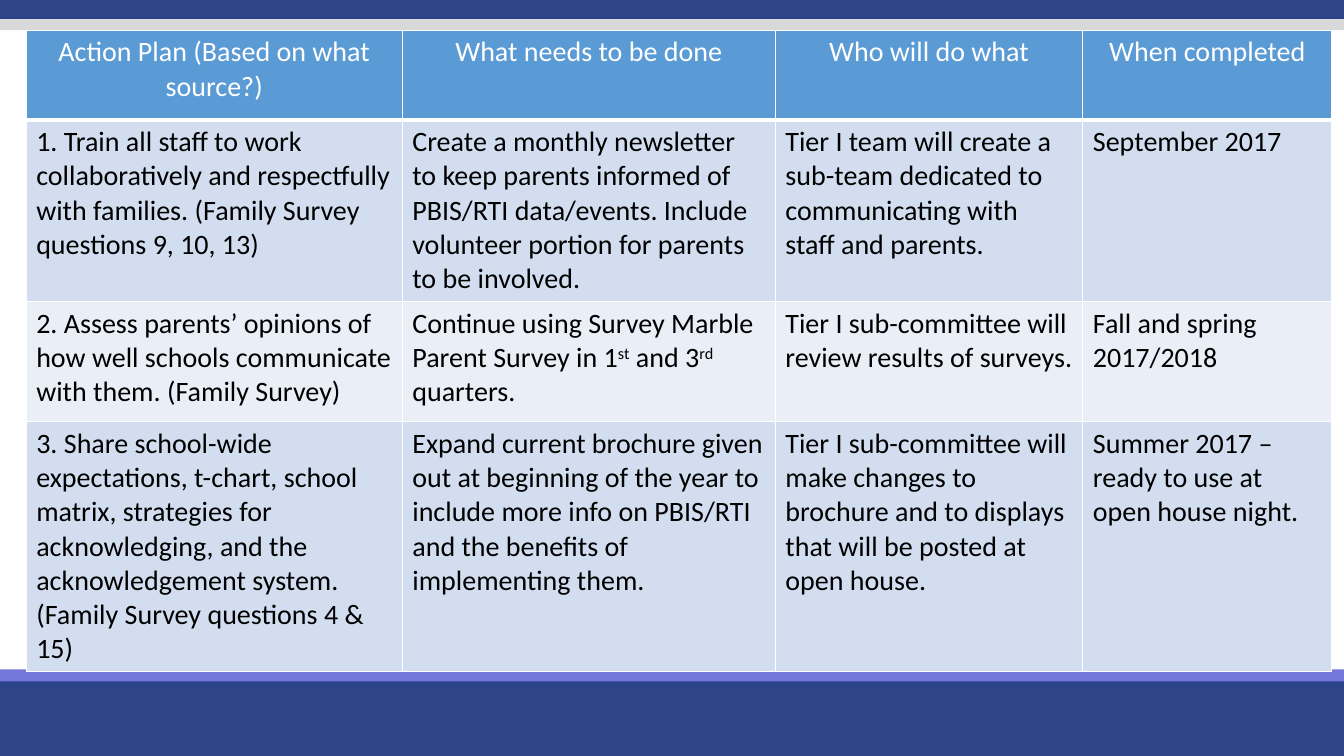
from lxml.etree import SubElement
from pptx import Presentation
from pptx.dml.color import RGBColor
from pptx.enum.shapes import MSO_SHAPE as SHAPE
from pptx.enum.text import PP_ALIGN as ALIGN
from pptx.oxml.ns import qn
from pptx.util import Inches, Pt

BANDS = [
    (6.7, 0.8, "2E4488"),
    (6.64, 0.12, "7476DA"),
    (-0.03, 0.22, "2E4488"),
    (0.19, 0.11, "D9D9D9"),
]
COL_WIDTHS = [3.73, 3.7, 3.05, 2.47]
ROW_HEIGHTS = [0.89, 1.79, 1.19, 2.46]
ROW_FILLS = ["5B9BD5", "D2DEEF", "EAEFF7", "D2DEEF"]
SUPERSCRIPT_MARK = "^"
PLAN = [
    [
        "Action Plan (Based on what source?)",
        "What needs to be done",
        "Who will do what",
        "When completed",
    ],
    [
        "1. Train all staff to work collaboratively and respectfully with families. "
        "(Family Survey questions 9, 10, 13)",
        "Create a monthly newsletter to keep parents informed of PBIS/RTI data/events. "
        "Include volunteer portion for parents to be involved.",
        "Tier I team will create a sub-team dedicated to communicating with staff and parents.",
        "September 2017",
    ],
    [
        "2. Assess parents’ opinions of how well schools communicate with them. (Family Survey)",
        "Continue using Survey Marble Parent Survey in 1^st^ and 3^rd^ quarters.",
        "Tier I sub-committee will review results of surveys.",
        "Fall and spring 2017/2018",
    ],
    [
        "3. Share school-wide expectations, t-chart, school matrix, strategies for "
        "acknowledging, and the acknowledgement system. (Family Survey questions 4 & 15)",
        "Expand current brochure given out at beginning of the year to include more info "
        "on PBIS/RTI and the benefits of implementing them.",
        "Tier I sub-committee will make changes to brochure and to displays that will be "
        "posted at open house.",
        "Summer 2017 – ready to use at open house night.",
    ],
]


def rgb(color):
    return RGBColor.from_string(color)


def add_band(s, top, height, color):
    sp = s.shapes.add_shape(SHAPE.RECTANGLE, 0, Inches(top), Inches(13.33), Inches(height))
    sp.shadow.inherit = False
    sp.fill.solid()
    sp.fill.fore_color.rgb = rgb(color)
    sp.line.fill.background()


def set_borders(cell, color, **widths):
    tcPr = cell._tc.get_or_add_tcPr()
    for side in "LRTB":
        ln = SubElement(tcPr, qn(f"a:ln{side}"), w=str(Pt(widths.get(side, 1))))
        fill = SubElement(ln, qn("a:solidFill"))
        SubElement(fill, qn("a:srgbClr"), val=color)


def add_text(cell, text, color, align):
    p = cell.text_frame.paragraphs[0]
    p.alignment = align
    for i, part in enumerate(text.split(SUPERSCRIPT_MARK)):
        r = p.add_run()
        r.text = part
        r.font.name = "Calibri"
        r.font.size = Pt(20)
        r.font.color.rgb = rgb(color)
        if i % 2:
            r._r.get_or_add_rPr().set("baseline", "30000")


def fill_cell(cell, text, row):
    header = row == 0
    edge = {0: {"B": 3}, 1: {"T": 3}}.get(row, {})
    set_borders(cell, "FFFFFF", **edge)
    cell.fill.solid()
    cell.fill.fore_color.rgb = rgb(ROW_FILLS[row])
    add_text(cell, text, "FFFFFF" if header else "000000",
             ALIGN.CENTER if header else ALIGN.LEFT)


def add_plan_table(s):
    frame = s.shapes.add_table(
        len(ROW_HEIGHTS), len(COL_WIDTHS), Inches(0.26), Inches(0.3),
        Inches(sum(COL_WIDTHS)), Inches(sum(ROW_HEIGHTS)))
    table = frame.table
    for column, width in zip(table.columns, COL_WIDTHS):
        column.width = Inches(width)
    for i, texts in enumerate(PLAN):
        table.rows[i].height = Inches(ROW_HEIGHTS[i])
        for j, text in enumerate(texts):
            fill_cell(table.cell(i, j), text, i)
    table.first_row = True
    table.horz_banding = False


def main():
    prs = Presentation()
    prs.slide_width, prs.slide_height = Inches(13.33), Inches(7.5)
    s = prs.slides.add_slide(prs.slide_layouts[6])
    s.background.fill.solid()
    s.background.fill.fore_color.rgb = rgb("FFFFFF")
    for top, height, color in BANDS:
        add_band(s, top, height, color)
    add_plan_table(s)
    prs.save("out.pptx")


if __name__ == "__main__":
    main()
